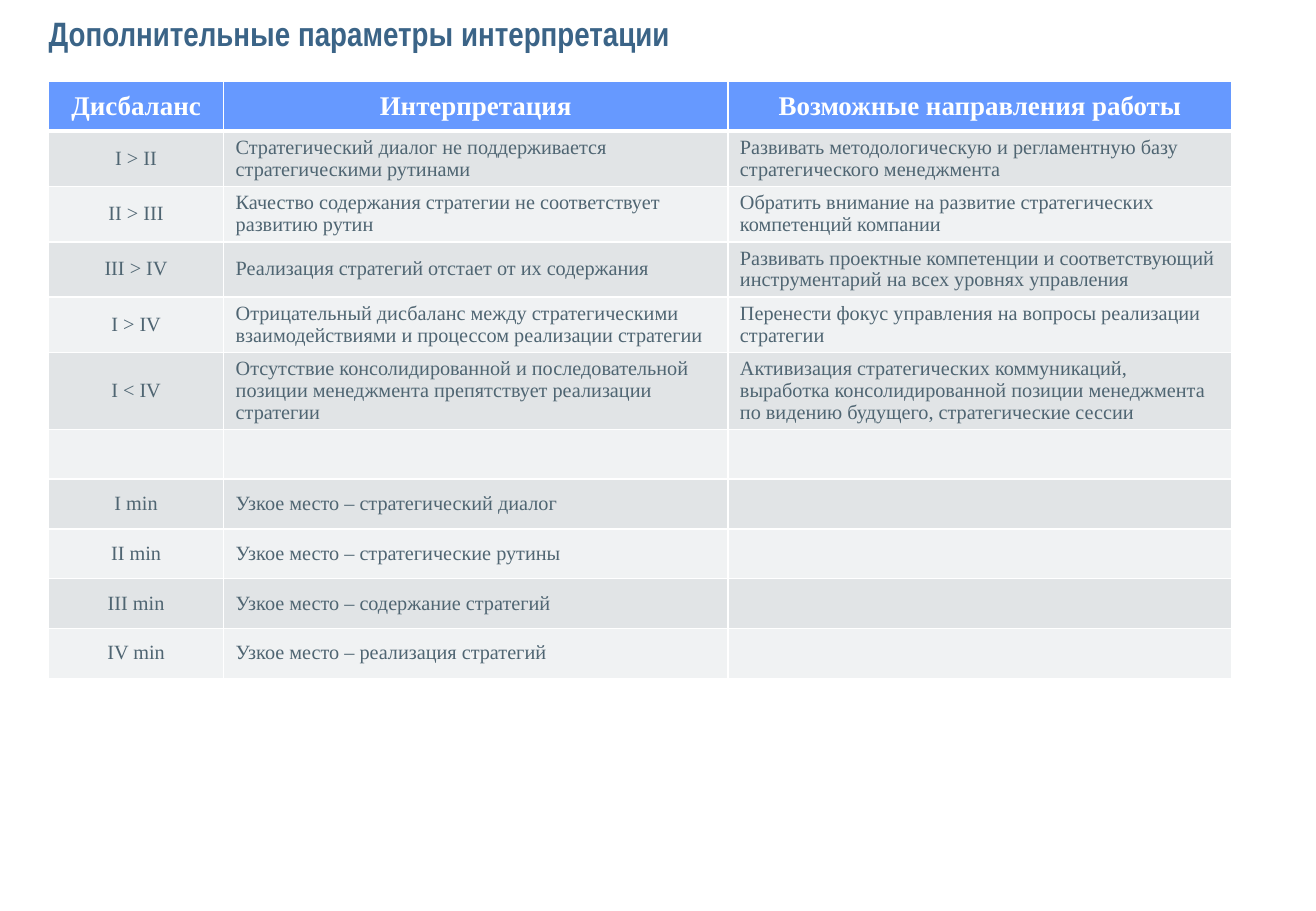
from dataclasses import dataclass

from lxml.etree import SubElement
from pptx import Presentation
from pptx.dml.color import RGBColor
from pptx.enum.text import MSO_ANCHOR, MSO_AUTO_SIZE, PP_ALIGN
from pptx.oxml.ns import qn
from pptx.util import Inches, Pt


@dataclass(frozen=True)
class Theme:
    title_font: str = "Arial Narrow"
    table_font: str = "Times New Roman"
    title_color: str = "3B6487"
    body_color: str = "4F6572"
    white: str = "FFFFFF"
    header_fill: str = "6699FF"
    bands: tuple = ("E1E4E6", "F0F2F3")
    title_size: int = 20
    header_size: int = 16
    body_size: int = 12
    body_spacing: float = 0.96
    thin: int = 1
    thick: int = 3


HEADER = ("Дисбаланс", "Интерпретация", "Возможные направления работы")
ROWS = (
    ("I > II", "Стратегический диалог не поддерживается стратегическими рутинами",
     "Развивать методологическую и регламентную базу стратегического менеджмента"),
    ("II > III", "Качество содержания стратегии не соответствует развитию рутин",
     "Обратить внимание на развитие стратегических компетенций компании"),
    ("III > IV", "Реализация стратегий отстает от их содержания",
     "Развивать проектные компетенции и соответствующий инструментарий "
     "на всех уровнях управления"),
    ("I > IV", "Отрицательный дисбаланс между стратегическими взаимодействиями "
     "и процессом реализации стратегии",
     "Перенести фокус управления на вопросы реализации стратегии"),
    ("I < IV", "Отсутствие консолидированной и последовательной позиции менеджмента "
     "препятствует реализации стратегии",
     "Активизация стратегических коммуникаций, выработка консолидированной позиции "
     "менеджмента по видению будущего, стратегические сессии"),
    ("", "", ""),
    ("I min", "Узкое место – стратегический диалог", ""),
    ("II min", "Узкое место – стратегические рутины", ""),
    ("III min", "Узкое место – содержание стратегий", ""),
    ("IV min", "Узкое место – реализация стратегий", ""),
)
COL_WIDTHS = (1.44, 4.15, 4.15)
ROW_HEIGHT = 0.41


class SlideBuilder:
    """Draws elements on one slide in the given theme."""

    def __init__(self, prs, theme):
        self.theme = theme
        self.s = prs.slides.add_slide(prs.slide_layouts[5])

    def add_text(self, p, text, color, align=PP_ALIGN.LEFT, spacing=1.0, **font):
        p.alignment, p.line_spacing = align, spacing
        r = p.add_run()
        r.text = text
        r.font.color.rgb = RGBColor.from_string(color)
        for name, value in font.items():
            setattr(r.font, name, value)

    def title(self, text, left, top, width, height):
        t, sp = self.theme, self.s.shapes.title
        box = dict(left=left, top=top, width=width, height=height)
        for name, value in box.items():
            setattr(sp, name, Inches(value))
        tf = sp.text_frame
        frame = dict(word_wrap=True, auto_size=MSO_AUTO_SIZE.NONE,
                     vertical_anchor=MSO_ANCHOR.MIDDLE)
        for name, value in frame.items():
            setattr(tf, name, value)
        self.add_text(tf.paragraphs[0], text, t.title_color, name=t.title_font,
                      size=Pt(t.title_size), bold=True)

    def borders(self, cell, **widths):
        """Set cell borders; keys are the sides L, R, T and B in that order."""
        tc_pr = cell._tc.get_or_add_tcPr()
        for side, width in widths.items():
            ln = SubElement(tc_pr, qn(f"a:ln{side}"), w=str(Pt(width)))
            fill = SubElement(ln, qn("a:solidFill"))
            SubElement(fill, qn("a:srgbClr"), val=self.theme.white)

    def cell(self, cell, row, col, text):
        t, is_header = self.theme, row == 0
        self.borders(cell, L=t.thin, R=t.thin,
                     T=t.thick if row == 1 else t.thin,
                     B=t.thick if is_header else t.thin)
        fill = t.header_fill if is_header else t.bands[(row - 1) % 2]
        cell.fill.solid()
        cell.fill.fore_color.rgb = RGBColor.from_string(fill)
        cell.vertical_anchor = MSO_ANCHOR.MIDDLE
        if text:
            self.add_text(cell.text_frame.paragraphs[0], text,
                          t.white if is_header else t.body_color,
                          PP_ALIGN.CENTER if is_header or col == 0 else PP_ALIGN.LEFT,
                          1.0 if is_header else t.body_spacing,
                          name=t.table_font, bold=is_header,
                          size=Pt(t.header_size if is_header else t.body_size))

    def table(self, rows, col_widths, row_height, left, top):
        table = self.s.shapes.add_table(
            len(rows), len(col_widths), Inches(left), Inches(top),
            Inches(sum(col_widths)), Inches(row_height * len(rows))).table
        for column, width in zip(table.columns, col_widths):
            column.width = Inches(width)
        for i, texts in enumerate(rows):
            table.rows[i].height = Inches(row_height)
            for j, text in enumerate(texts):
                self.cell(table.cell(i, j), i, j, text)


def main():
    prs = Presentation()
    prs.slide_width, prs.slide_height = Inches(10.83), Inches(7.5)
    slide = SlideBuilder(prs, Theme())
    slide.title("Дополнительные параметры интерпретации", 0.3, 0.02, 9.19, 0.51)
    slide.table((HEADER, *ROWS), COL_WIDTHS, ROW_HEIGHT, 0.4, 0.67)
    prs.save("out.pptx")


if __name__ == "__main__":
    main()
